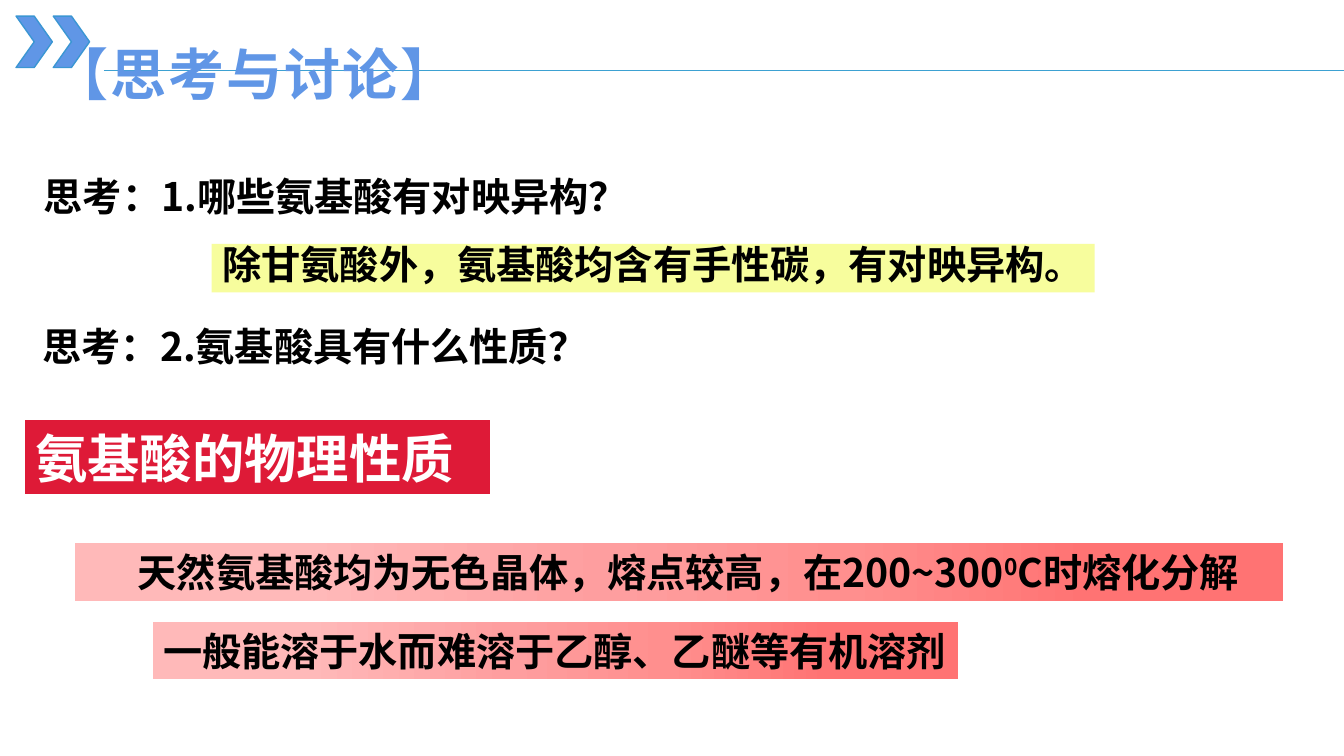
from lxml.etree import SubElement
from pptx import Presentation
from pptx.dml.color import RGBColor
from pptx.enum.shapes import MSO_CONNECTOR, MSO_SHAPE
from pptx.enum.text import MSO_ANCHOR, MSO_AUTO_SIZE, PP_ALIGN
from pptx.oxml.ns import qn
from pptx.util import Pt

FONT = "Noto Sans CJK SC"
BLACK = RGBColor(0x00, 0x00, 0x00)
WHITE = RGBColor(0xFF, 0xFF, 0xFF)
BLUE = RGBColor(0x60, 0x96, 0xE6)
CHEVRON_EDGE = RGBColor(0x3B, 0x96, 0xD3)
RULE_BLUE = RGBColor(0x3D, 0xA1, 0xD2)
YELLOW = RGBColor(0xF7, 0xFD, 0x9D)
RED = RGBColor(0xDE, 0x1A, 0x37)
PINK_STOPS = [
    (19, RGBColor(0xFF, 0xB9, 0xB9)),
    (44, RGBColor(0xFE, 0x9E, 0x9F)),
    (64, RGBColor(0xFF, 0x8F, 0x8E)),
    (84, RGBColor(0xFF, 0x73, 0x73)),
]


def write_text(shape, *runs, size=28, color=BLACK, align=PP_ALIGN.LEFT, wrap=False,
               line_spacing=1.0, tracking=0, indent=0, inset=None):
    """Fill a shape with one paragraph; a run is a string or (string, baseline percent)."""
    frame = shape.text_frame
    frame.auto_size = MSO_AUTO_SIZE.NONE
    frame.word_wrap = wrap
    frame.vertical_anchor = MSO_ANCHOR.MIDDLE
    if inset is not None:
        frame.margin_left = frame.margin_right = Pt(inset)
        frame.margin_top = frame.margin_bottom = Pt(inset)
    paragraph = frame.paragraphs[0]
    paragraph.alignment = align
    paragraph.line_spacing = line_spacing
    paragraph.space_before = Pt(0)
    if indent:
        paragraph._p.get_or_add_pPr().set("indent", str(Pt(indent)))
    for item in runs:
        text, baseline = (item, 0) if isinstance(item, str) else item
        run = paragraph.add_run()
        run.text = text
        font = run.font
        font.name, font.size, font.bold = FONT, Pt(size), True
        font.color.rgb = color
        properties = run._r.get_or_add_rPr()
        SubElement(properties, qn("a:ea")).set("typeface", FONT)
        if baseline:
            properties.set("baseline", str(baseline * 1000))
        if tracking:
            properties.set("spc", str(int(tracking * 100)))


def place(shape, left, top, width, height):
    shape.left, shape.top = Pt(left), Pt(top)
    shape.width, shape.height = Pt(width), Pt(height)


def fill_gradient(shape, stops):
    """Fill from left to right with (percent, colour) stops."""
    shape.fill.gradient()
    shape.fill.gradient_angle = 0
    stop_list = shape.element.spPr.find(qn("a:gradFill")).find(qn("a:gsLst"))
    for old_stop in list(stop_list):
        stop_list.remove(old_stop)
    for percent, color in stops:
        stop = SubElement(stop_list, qn("a:gs"), pos=str(percent * 1000))
        SubElement(stop, qn("a:srgbClr"), val=str(color))


def add_panel(slide, kind, left, top, width, height, fill, line=None):
    """Add a preset shape filled with a colour or a list of gradient stops."""
    shape = slide.shapes.add_shape(kind, Pt(left), Pt(top), Pt(width), Pt(height))
    shape.shadow.inherit = False
    if isinstance(fill, list):
        fill_gradient(shape, fill)
    else:
        shape.fill.solid()
        shape.fill.fore_color.rgb = fill
    if line is None:
        shape.line.fill.background()
    else:
        shape.line.color.rgb = line
        shape.line.width = Pt(1)
    return shape


def add_question(slide, text, left, top, width):
    box = slide.shapes.add_textbox(Pt(left), Pt(top), Pt(width), Pt(34.6))
    write_text(box, text, align=PP_ALIGN.CENTER, line_spacing=0.8)


def add_header(slide):
    for index in range(2):
        add_panel(slide, MSO_SHAPE.CHEVRON, 11.5 + 26.6 * index, 11.5, 25.9, 36.7,
                  BLUE, line=CHEVRON_EDGE)
    rule = slide.shapes.add_connector(
        MSO_CONNECTOR.STRAIGHT, Pt(74.2), Pt(50.4), Pt(960), Pt(50.4))
    rule.line.color.rgb = RULE_BLUE
    rule.line.width = Pt(0.5)
    SubElement(rule.element.spPr, qn("a:effectLst"))

    title = slide.shapes.title
    place(title, 13.7, 28.1, 336.2, 48.2)
    write_text(title, "【思考与讨论】", size=40, color=BLUE, align=PP_ALIGN.CENTER,
               wrap=True, tracking=1.5, inset=0)
    slide.shapes.element.append(title.element)  # the title lies over the rule


def main():
    presentation = Presentation()
    presentation.slide_width, presentation.slide_height = Pt(960), Pt(540)
    slide = presentation.slides.add_slide(presentation.slide_layouts[5])
    add_header(slide)

    add_question(slide, "思考：1.哪些氨基酸有对映异构？", 23.8, 126, 432)
    answer = add_panel(slide, MSO_SHAPE.RECTANGLE, 151.2, 174.2, 630.7, 34.6, YELLOW)
    write_text(answer, "除甘氨酸外，氨基酸均含有手性碳，有对映异构。",
               align=PP_ALIGN.CENTER, line_spacing=0.8)
    add_question(slide, "思考：2.氨基酸具有什么性质？", 23, 232.6, 403.9)

    heading = add_panel(slide, MSO_SHAPE.RECTANGLE, 18, 300.2, 331.9, 52.6, RED)
    write_text(heading, "氨基酸的物理性质", size=37.4, color=WHITE, wrap=True)

    melting = add_panel(slide, MSO_SHAPE.RECTANGLE, 53.3, 388.1, 863.3, 41, PINK_STOPS)
    write_text(melting, "天然氨基酸均为无色晶体，熔点较高，在200~300", ("0", 30),
               "C时熔化分解", wrap=True, indent=38)
    solubility = add_panel(slide, MSO_SHAPE.RECTANGLE, 109.4, 444.2, 574.6, 41, PINK_STOPS)
    write_text(solubility, "一般能溶于水而难溶于乙醇、乙醚等有机溶剂")

    presentation.save("out.pptx")


if __name__ == "__main__":
    main()
